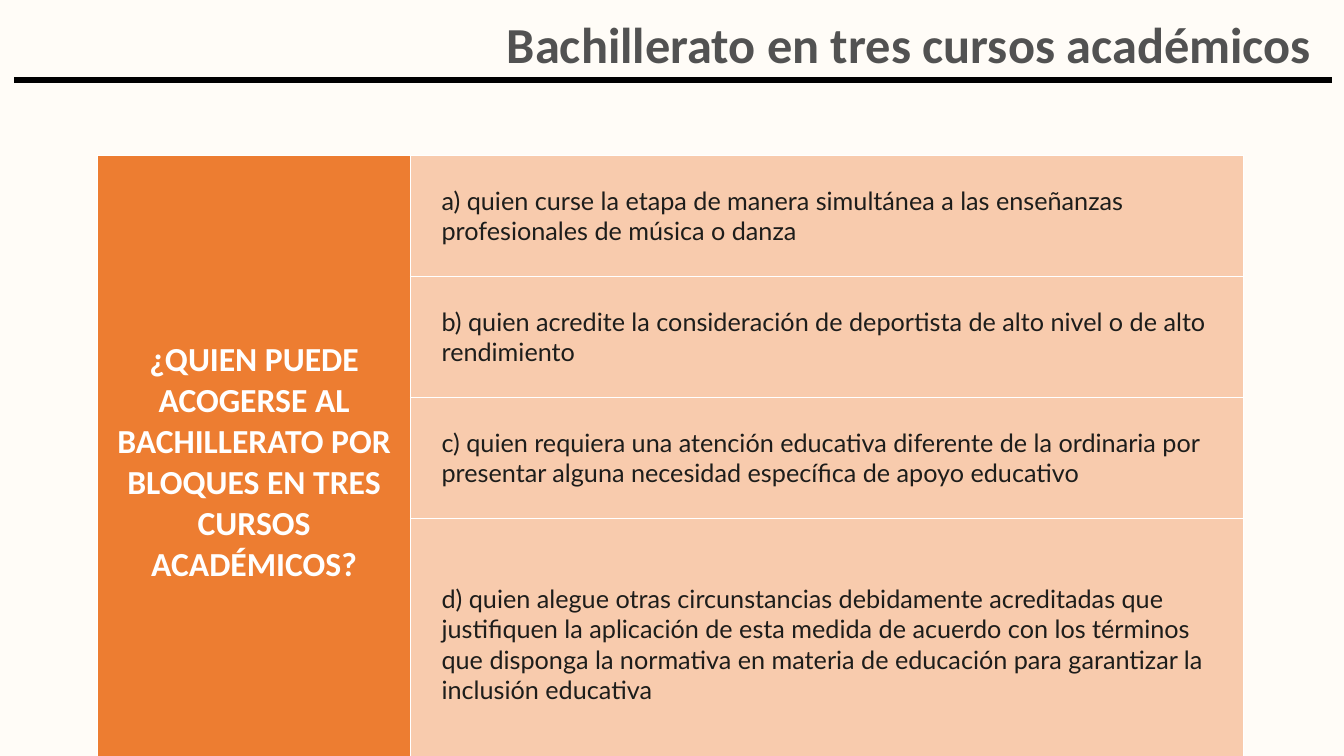
"""Build the slide on who may take the Bachillerato in three academic years."""
from dataclasses import dataclass

from lxml import etree
from pptx import Presentation
from pptx import util as u
from pptx.dml.color import RGBColor
from pptx.enum import shapes, text
from pptx.oxml.ns import qn

TITLE = "Bachillerato en tres cursos académicos "
QUESTION = "¿QUIEN PUEDE ACOGERSE AL BACHILLERATO POR BLOQUES EN TRES CURSOS ACADÉMICOS?"
CASES = [
    "a) quien curse la etapa de manera simultánea a las enseñanzas profesionales de música o danza",
    "b) quien acredite la consideración de deportista de alto nivel o de alto rendimiento",
    "c) quien requiera una atención educativa diferente de la ordinaria por presentar "
    "alguna necesidad específica de apoyo educativo",
    "d) quien alegue otras circunstancias debidamente acreditadas que justifiquen la aplicación "
    "de esta medida de acuerdo con los términos que disponga la normativa en materia de educación "
    "para garantizar la inclusión educativa",
]


@dataclass(frozen=True)
class Theme:
    paper: str = "FFFCF7"
    heading: str = "525252"
    rule: str = "000000"
    accent: str = "ED7D31"
    tint: str = "F8CBAD"
    ink: str = "1D1D1B"
    white: str = "FFFFFF"
    heading_font: str = "Calibri"
    body_font: str = "Lato"
    title_size: float = 36
    question_size: float = 24
    case_size: float = 18
    rule_width: float = 4.25
    border_width: float = 1


THEME = Theme()
WIDTH, HEIGHT = 13.33, 7.5
TITLE_BOX = (1.39, 0.15, 11.83, 0.76)
RULE_LEFT, RULE_RIGHT, RULE_TOP = 0.14, 13.21, 0.79
TABLE_LEFT, TABLE_TOP = 0.97, 1.54
COLUMNS = (3.1, 8.26)
ROWS = [1.2] * (len(CASES) - 1) + [1.56]
CASE_INSET = 0.31


def write(frame, words, *, size, color, font, bold=False, align=None, spacing=None):
    frame.word_wrap = True
    paragraph = frame.paragraphs[0]
    paragraph.alignment = align
    paragraph.line_spacing = spacing
    run = paragraph.add_run()
    run.text = words
    run.font.size = u.Pt(size)
    run.font.name = font
    run.font.bold = bold
    run.font.color.rgb = RGBColor.from_string(color)


def paint(cell, color):
    cell.fill.solid()
    cell.fill.fore_color.rgb = RGBColor.from_string(color)
    cell.vertical_anchor = text.MSO_ANCHOR.MIDDLE
    properties = cell._tc.get_or_add_tcPr()
    for position, side in enumerate(("a:lnL", "a:lnR", "a:lnT", "a:lnB")):
        border = etree.Element(qn(side), w=str(u.Pt(THEME.border_width)))
        fill = etree.SubElement(border, qn("a:solidFill"))
        etree.SubElement(fill, qn("a:srgbClr"), val=THEME.white)
        properties.insert(position, border)


def add_heading(slide):
    box = slide.shapes.add_textbox(*map(u.Inches, TITLE_BOX))
    write(box.text_frame, TITLE, size=THEME.title_size, color=THEME.heading,
          font=THEME.heading_font, bold=True, align=text.PP_ALIGN.RIGHT, spacing=0.9)
    rule = slide.shapes.add_connector(
        shapes.MSO_CONNECTOR.STRAIGHT,
        *map(u.Inches, (RULE_LEFT, RULE_TOP, RULE_RIGHT, RULE_TOP)))
    rule.line.color.rgb = RGBColor.from_string(THEME.rule)
    rule.line.width = u.Pt(THEME.rule_width)
    etree.SubElement(rule._element.spPr, qn("a:effectLst"))


def add_cases(slide):
    table = slide.shapes.add_table(
        len(ROWS), len(COLUMNS),
        *map(u.Inches, (TABLE_LEFT, TABLE_TOP, sum(COLUMNS), sum(ROWS)))).table
    for column, width in zip(table.columns, COLUMNS):
        column.width = u.Inches(width)
    for row, height in zip(table.rows, ROWS):
        row.height = u.Inches(height)
    question = table.cell(0, 0)
    question.merge(table.cell(len(ROWS) - 1, 0))
    write(question.text_frame, QUESTION, size=THEME.question_size, color=THEME.white,
          font=THEME.heading_font, bold=True, align=text.PP_ALIGN.CENTER)
    for index, case in enumerate(CASES):
        paint(table.cell(index, 0), THEME.accent)
        cell = table.cell(index, 1)
        paint(cell, THEME.tint)
        cell.margin_left = cell.margin_right = u.Inches(CASE_INSET)
        write(cell.text_frame, case, size=THEME.case_size, color=THEME.ink,
              font=THEME.body_font)


def main():
    deck = Presentation()
    deck.slide_width, deck.slide_height = u.Inches(WIDTH), u.Inches(HEIGHT)
    slide = deck.slides.add_slide(deck.slide_layouts[6])
    slide.background.fill.solid()
    slide.background.fill.fore_color.rgb = RGBColor.from_string(THEME.paper)
    add_heading(slide)
    add_cases(slide)
    deck.save("out.pptx")


if __name__ == "__main__":
    main()
